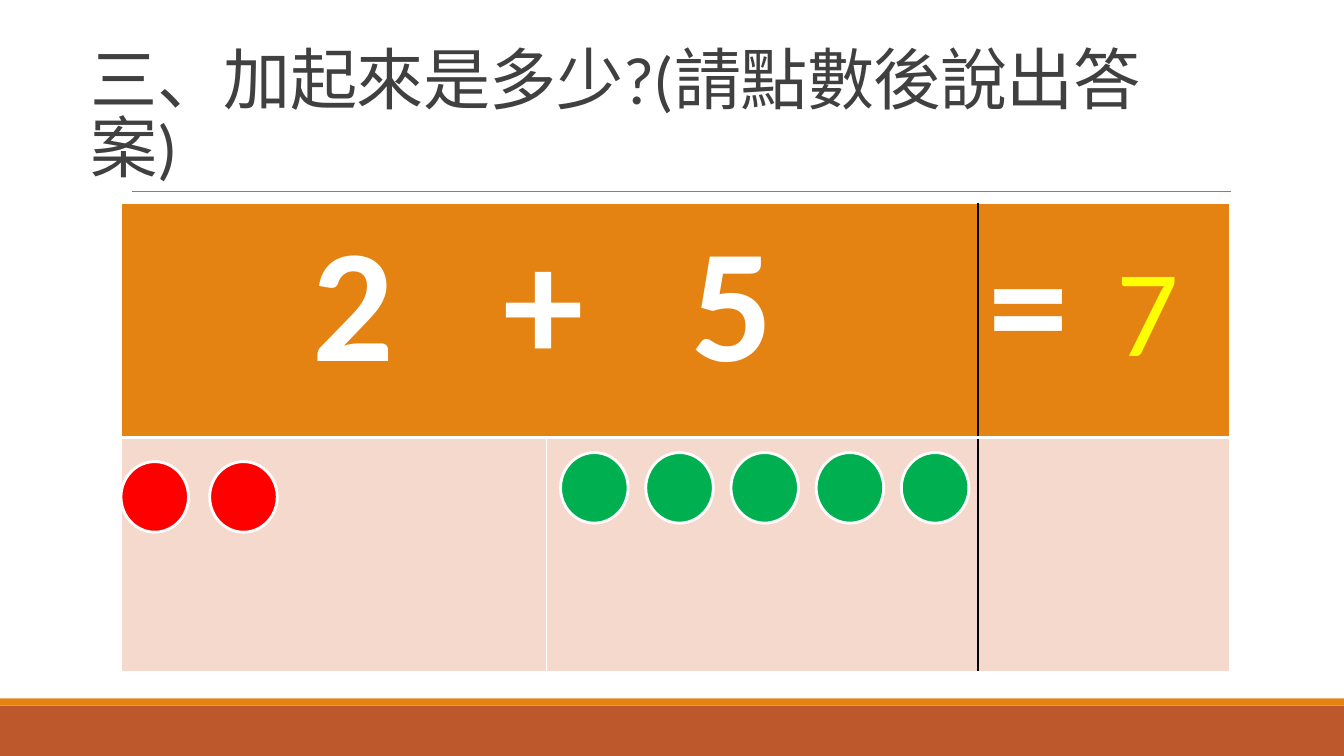
from lxml import etree
from pptx import Presentation
from pptx import util as u
from pptx.dml.color import RGBColor
from pptx.enum import shapes, text
from pptx.oxml.ns import qn

WHITE = RGBColor(0xFF, 0xFF, 0xFF)
BLACK = RGBColor(0, 0, 0)
GREY = RGBColor(0x80, 0x80, 0x80)
DARK = RGBColor(0x40, 0x40, 0x40)
ORANGE = RGBColor(0xE4, 0x83, 0x12)
RUST = RGBColor(0xBD, 0x58, 0x2C)
PINK = RGBColor(0xF5, 0xD9, 0xCC)
RED = RGBColor(0xFF, 0, 0)
GREEN = RGBColor(0, 0xB0, 0x50)
YELLOW = RGBColor(0xFF, 0xFF, 0)

WIDTH, HEIGHT = 13.33, 7.5
COLUMNS, ROWS = (4.22, 4.28, 2.5), (2.32, 2.32)
COUNTER_SIZE = (0.67, 0.7)
COUNTER_STEP = 0.845


def inches(*lengths):
    return [u.Inches(length) for length in lengths]


def style_font(font, color, **values):
    font.color.rgb = color
    for name, value in {"name": "Calibri", **values}.items():
        setattr(font, name, value)


def add_filled(slide, kind, box, fill, outline=None):
    figure = slide.shapes.add_shape(kind, *inches(*box))
    figure.shadow.inherit = False
    figure.fill.solid()
    figure.fill.fore_color.rgb = fill
    if outline:
        figure.line.color.rgb = outline
        figure.line.width = u.Pt(2)
    else:
        figure.line.fill.background()


def add_frame(slide):
    # Bottom bands and the rule under the title
    band_top = HEIGHT - 0.5
    for top, height, fill in ((band_top, 0.5, RUST), (band_top - 0.07, 0.07, ORANGE)):
        add_filled(slide, shapes.MSO_SHAPE.RECTANGLE, (0, top, WIDTH, height), fill)
    rule = slide.shapes.add_connector(shapes.MSO_CONNECTOR.STRAIGHT, *inches(1.31, 1.9, 12.21, 1.9))
    rule.line.color.rgb = GREY
    rule.line.width = u.Pt(0.5)
    etree.SubElement(rule._element.spPr, qn("a:effectLst"))


def add_title(slide, box):
    title = slide.shapes.title
    for side, length in zip(("left", "top", "width", "height"), inches(*box)):
        setattr(title, side, length)
    frame = title.text_frame
    frame.text = "三、加起來是多少?(請點數後說出答案)"
    for name, value in {"word_wrap": True, "auto_size": text.MSO_AUTO_SIZE.NONE,
                        "vertical_anchor": text.MSO_ANCHOR.BOTTOM}.items():
        setattr(frame, name, value)
    heading = frame.paragraphs[0]
    heading.alignment = text.PP_ALIGN.LEFT
    heading.line_spacing = 0.85
    style_font(heading.runs[0].font, DARK, size=u.Pt(48))
    heading.runs[0].font._element.set("spc", "-50")


def set_borders(cell, left, right, bottom_width):
    # Borders come before the fill, in schema order
    borders = (("L", left, 1), ("R", right, 1), ("T", WHITE, 1), ("B", WHITE, bottom_width))
    properties = cell._tc.get_or_add_tcPr()
    for index, (side, color, width) in enumerate(borders):
        border = etree.Element(qn(f"a:ln{side}"), w=str(u.Pt(width)))
        solid = etree.SubElement(border, qn("a:solidFill"))
        etree.SubElement(solid, qn("a:srgbClr"), val=str(color))
        properties.insert(index, border)


def write_sum(cell, words, tab_stops=()):
    paragraph = cell.text_frame.paragraphs[0]
    term = paragraph.add_run()
    term.text = words
    style_font(term.font, WHITE, size=u.Pt(115), bold=True)
    if tab_stops:
        tabs = etree.SubElement(paragraph._p.get_or_add_pPr(), qn("a:tabLst"))
        for stop in tab_stops:
            etree.SubElement(tabs, qn("a:tab"), pos=str(u.Inches(stop)), algn="ctr")


def add_sum_table(slide, left, top):
    box = (left, top, sum(COLUMNS), sum(ROWS))
    table = slide.shapes.add_table(len(ROWS), len(COLUMNS), *inches(*box)).table
    for column, width in zip(table.columns, inches(*COLUMNS)):
        column.width = width
    for row, height in zip(table.rows, inches(*ROWS)):
        row.height = height
    table.cell(0, 0).merge(table.cell(0, 1))
    for r, (fill, bottom_width) in enumerate(((ORANGE, 3), (PINK, 1))):
        for c in range(len(COLUMNS)):
            cell = table.cell(r, c)
            cell.fill.solid()
            cell.fill.fore_color.rgb = fill
            before_equals = c == 1 or (r == 0 and c == 0)
            set_borders(cell, BLACK if c == 2 else WHITE,
                        BLACK if before_equals else WHITE, bottom_width)
    write_sum(table.cell(0, 0), "\t2\t+\t5", (2.2, 4.09, 5.96))
    write_sum(table.cell(0, 2), "=")


def add_counters(slide, left, top, count, fill, step=COUNTER_STEP):
    for index in range(count):
        add_filled(slide, shapes.MSO_SHAPE.OVAL,
                   (left + index * step, top, *COUNTER_SIZE), fill, WHITE)


def add_answer(slide, box):
    answer = slide.shapes.add_textbox(*inches(*box)).text_frame
    answer.word_wrap = True
    answer.text = "7"
    answer.paragraphs[0].alignment = text.PP_ALIGN.CENTER
    style_font(answer.paragraphs[0].runs[0].font, YELLOW, size=u.Pt(88))


def add_addition_slide(deck):
    slide = deck.slides.add_slide(deck.slide_layouts[5])
    left, top = 1.2, 2.02
    counters_top = top + ROWS[0]
    add_frame(slide)
    add_title(slide, (0.8, 0.31, 11.4, 1.59))
    add_sum_table(slide, left, top)
    # Counters for each addend
    add_counters(slide, left, counters_top + 0.24, 2, RED, step=0.88)
    add_counters(slide, left + COLUMNS[0] + 0.14, counters_top + 0.15, 5, GREEN)
    add_answer(slide, (left + sum(COLUMNS[:2]) + 0.93, top + 0.25, 1.5, 1.58))


def main():
    deck = Presentation()
    deck.slide_width, deck.slide_height = inches(WIDTH, HEIGHT)
    add_addition_slide(deck)
    deck.save("out.pptx")


if __name__ == "__main__":
    main()
